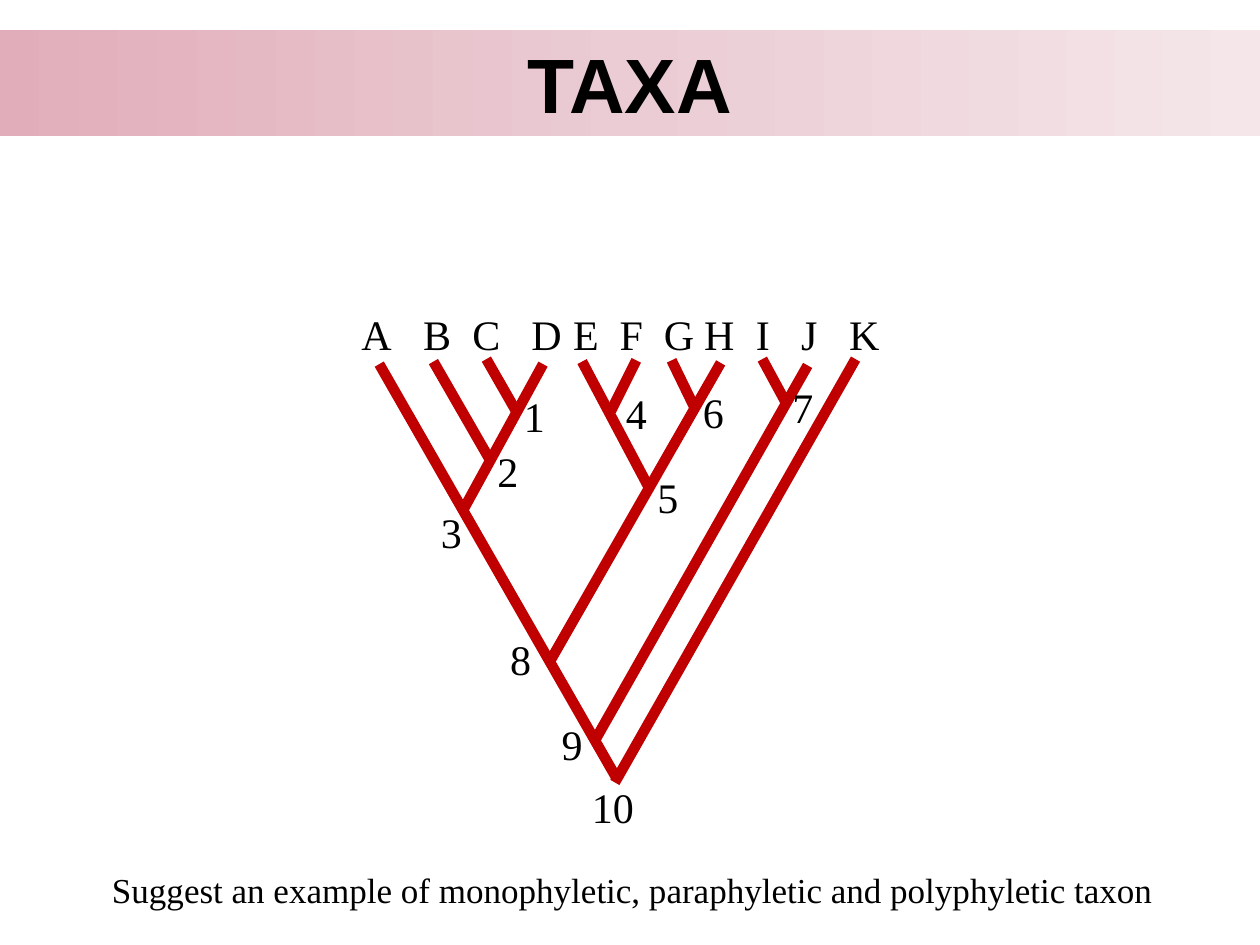
from copy import deepcopy
from typing import NamedTuple

from lxml import etree
from pptx import Presentation
from pptx.dml.color import RGBColor
from pptx.enum.shapes import MSO_CONNECTOR
from pptx.enum.text import MSO_ANCHOR, PP_ALIGN
from pptx.oxml.ns import qn
from pptx.util import Inches, Pt

STRAIGHT = MSO_CONNECTOR.STRAIGHT
CENTER = PP_ALIGN.CENTER
MIDDLE = MSO_ANCHOR.MIDDLE

BLACK = RGBColor(0x00, 0x00, 0x00)
BRANCH_RED = RGBColor(0xC0, 0x00, 0x00)
BANNER_COLORS = [
    RGBColor(0xE1, 0xAD, 0xBA),
    RGBColor(0xEB, 0xCC, 0xD4),
    RGBColor(0xF4, 0xE6, 0xE9),
]
TITLE_FONT = "Arial"
TEXT_FONT = "Times New Roman"
TITLE_ONLY = 5

COLUMNS, ROWS = 100, 75
SLIDE_W, SLIDE_H = Inches(10), Inches(7.5)


class Branch(NamedTuple):
    tip_col: float
    tip_row: float
    node_col: float
    node_row: float


class Label(NamedTuple):
    text: str
    col: float
    row: float
    cols: float = 3.7
    rows: float = 5.1
    size: int = 24


BRANCHES = [
    Branch(30.1, 28.9, 48.9, 61.7),
    Branch(67.9, 28.5, 48.8, 62.1),
    Branch(64.1, 29.0, 47.2, 58.8),
    Branch(57.2, 28.8, 43.7, 52.4),
    Branch(43.1, 28.9, 36.8, 40.4),
    Branch(34.4, 28.7, 39.0, 36.7),
    Branch(38.6, 28.5, 41.0, 32.7),
    Branch(46.2, 28.7, 51.5, 38.7),
    Branch(53.3, 28.6, 55.2, 32.5),
    Branch(60.5, 28.5, 62.4, 32.0),
    Branch(50.5, 28.6, 48.5, 32.6),
]
TIPS = Label("\t".join("ABCDEFGHIJK"), 27.7, 24.0, 43.4)
TIP_STOPS = [4.9, 8.8, 13.5, 16.8, 20.5, 24.0, 27.2, 31.3, 34.9, 38.7]
NODES = [
    Label("1", 40.6, 30.5),
    Label("2", 38.5, 34.9),
    Label("3", 34.0, 39.7),
    Label("4", 48.7, 30.3),
    Label("6", 54.8, 30.2),
    Label("5", 51.2, 36.9),
    Label("7", 61.9, 29.8),
    Label("10", 46.0, 61.5, 5.4),
    Label("8", 39.5, 49.8),
    Label("9", 43.6, 56.5),
]
TASK = Label(
    "Suggest an example of monophyletic, paraphyletic and polyphyletic taxon",
    7.9, 68.4, 85.1, 4.4, 20,
)


def x(cols: float) -> int:
    return round(SLIDE_W * cols / COLUMNS)


def y(rows: float) -> int:
    return round(SLIDE_H * rows / ROWS)


def add_run(p, text: str, font: str, size: int, bold: bool = False) -> None:
    r = p.add_run()
    r.text = text
    r.font.name = font
    r.font.size = Pt(size)
    r.font.bold = bold
    r.font.color.rgb = BLACK


def format_title(title) -> None:
    title.left, title.top, title.width, title.height = x(0), y(2.4), x(100), y(8.4)
    title.fill.gradient()
    title.fill.gradient_angle = 0
    first_stop = title.fill.gradient_stops[0]
    stop_list = title._element.spPr.find(qn("a:gradFill")).find(qn("a:gsLst"))
    stop_list.insert(1, deepcopy(stop_list[0]))
    for i, (stop, color) in enumerate(zip(title.fill.gradient_stops, BANNER_COLORS)):
        stop.color.rgb = color
        stop.position = i / 2
    tf = title.text_frame
    tf.vertical_anchor = MIDDLE
    p = tf.paragraphs[0]
    p.alignment = CENTER
    add_run(p, "TAXA", TITLE_FONT, 44, bold=True)


def add_branch(s, branch: Branch) -> None:
    line = s.shapes.add_connector(
        STRAIGHT,
        x(branch.tip_col), y(branch.tip_row),
        x(branch.node_col), y(branch.node_row),
    )
    line.line.color.rgb = BRANCH_RED
    line.line.width = Pt(6)
    etree.SubElement(line._element.spPr, qn("a:effectLst"))


def add_label(s, label: Label, wrap: bool = False):
    sp = s.shapes.add_textbox(x(label.col), y(label.row), x(label.cols), y(label.rows))
    tf = sp.text_frame
    tf.word_wrap = wrap
    p = tf.paragraphs[0]
    add_run(p, label.text, TEXT_FONT, label.size)
    return p


def set_tab_stops(p, stops: list[float]) -> None:
    tabs = etree.SubElement(p._p.get_or_add_pPr(), qn("a:tabLst"))
    for stop in stops:
        etree.SubElement(tabs, qn("a:tab"), pos=str(x(stop)), algn="l")


def main() -> None:
    prs = Presentation()
    prs.slide_width, prs.slide_height = SLIDE_W, SLIDE_H
    s = prs.slides.add_slide(prs.slide_layouts[TITLE_ONLY])
    format_title(s.shapes.title)
    for branch in BRANCHES:
        add_branch(s, branch)
    set_tab_stops(add_label(s, TIPS, wrap=True), TIP_STOPS)
    for label in [*NODES, TASK]:
        add_label(s, label)
    prs.save("out.pptx")


if __name__ == "__main__":
    main()
